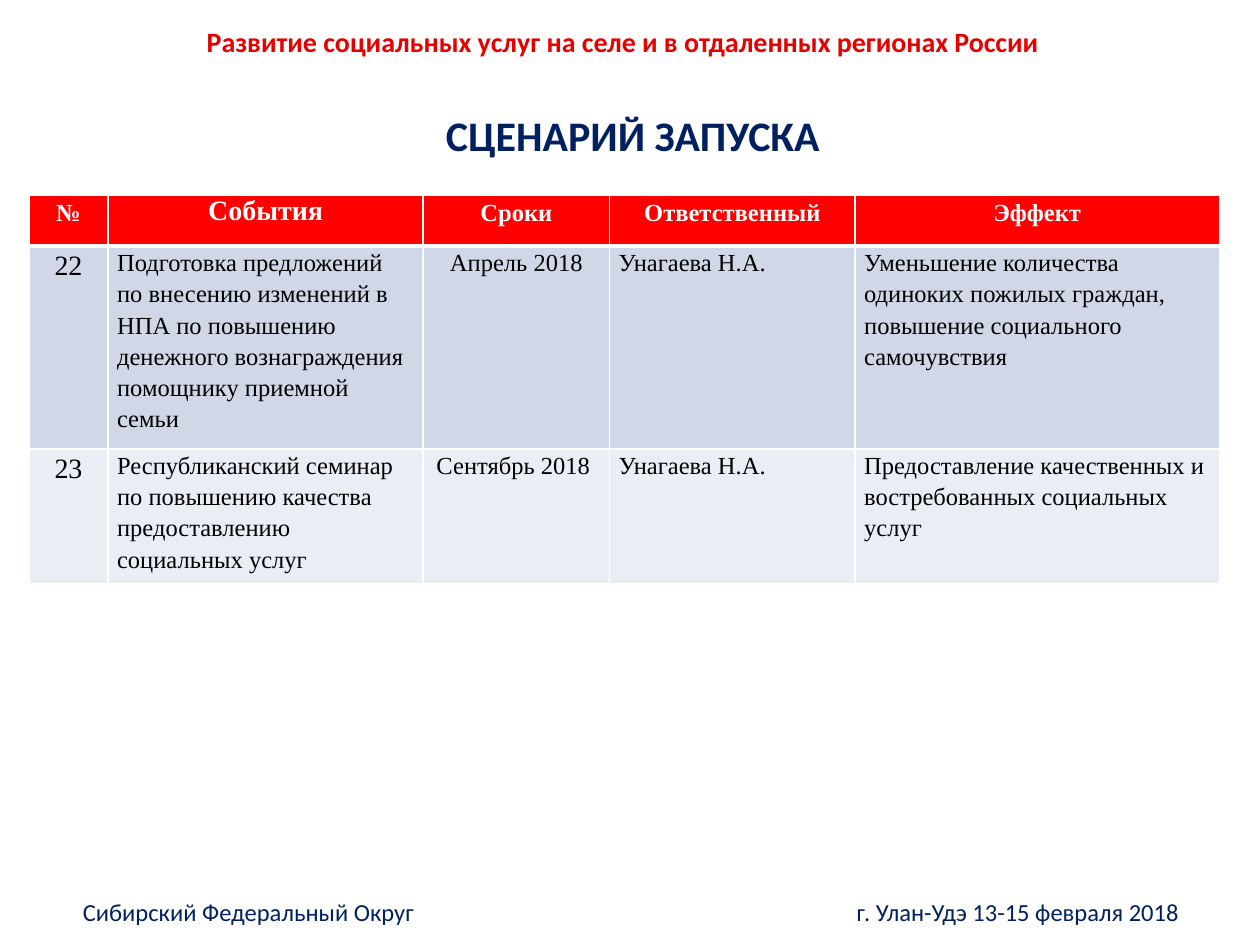
from lxml.etree import SubElement
from pptx import Presentation
from pptx.dml.color import RGBColor
from pptx.enum.text import MSO_ANCHOR, PP_ALIGN
from pptx.oxml.ns import qn
from pptx.util import Cm, Pt

COLORS = {
    "navy": "002060",
    "title_red": "E60000",
    "header_red": "FF0000",
    "white": "FFFFFF",
    "black": "000000",
    "band_dark": "D0D8E8",
    "band_light": "E9EDF4",
}
HEADERS = ["№", "События", "Сроки", "Ответственный", "Эффект"]
EVENTS = [
    ["22",
     "Подготовка предложений по внесению изменений в НПА по повышению "
     "денежного вознаграждения помощнику приемной семьи",
     "Апрель 2018", "Унагаева Н.А.",
     "Уменьшение количества одиноких пожилых граждан, повышение "
     "социального самочувствия"],
    ["23",
     "Республиканский семинар по повышению качества предоставлению "
     "социальных услуг",
     "Сентябрь 2018 ", "Унагаева Н.А.",
     "Предоставление качественных и востребованных социальных услуг"],
]
COLUMN_WIDTHS = [1.6, 6.35, 3.76, 4.95, 7.34]
ROW_HEIGHTS = [1.02, 4.09, 2.72]
CENTERED_COLUMNS = (0, 2)


def color(name):
    return RGBColor.from_string(COLORS[name])


def add_span(para, text, size, color_name, font="Calibri", bold=False):
    span = para.add_run()
    span.text = text
    span.font.name = font
    span.font.size = Pt(size)
    span.font.bold = bold
    span.font.color.rgb = color(color_name)


def add_text(page, bounds, text, size, color_name, bold=False,
             align=PP_ALIGN.LEFT, anchor=MSO_ANCHOR.MIDDLE):
    box = page.shapes.add_textbox(*(Cm(value) for value in bounds))
    box.text_frame.word_wrap = True
    box.text_frame.vertical_anchor = anchor
    para = box.text_frame.paragraphs[0]
    para.alignment = align
    add_span(para, text, size, color_name, bold=bold)
    return para


def add_right_tab(para, position):
    properties = para._p.get_or_add_pPr()
    tabs = SubElement(properties, qn("a:tabLst"))
    SubElement(tabs, qn("a:tab"), pos=str(Cm(position)), algn="r")


def set_borders(cell, bottom_width):
    properties = cell._tc.get_or_add_tcPr()
    widths = {"lnL": 1, "lnR": 1, "lnT": 1, "lnB": bottom_width}
    for side, width in widths.items():
        line = SubElement(properties, qn(f"a:{side}"), w=str(Pt(width)))
        fill = SubElement(line, qn("a:solidFill"))
        SubElement(fill, qn("a:srgbClr"), val=COLORS["white"])


def fill_cell(cell, text, size, fill, is_header, centered, spacing):
    set_borders(cell, 3 if is_header else 1)
    cell.fill.solid()
    cell.fill.fore_color.rgb = color(fill)
    cell.margin_left = cell.margin_right = Cm(0.08 if is_header else 0.18)
    cell.margin_top = cell.margin_bottom = 0
    para = cell.text_frame.paragraphs[0]
    para.alignment = PP_ALIGN.CENTER if centered else PP_ALIGN.LEFT
    para.line_spacing = spacing
    add_span(para, text, size, "white" if is_header else "black",
             "Times New Roman", is_header)


def add_schedule(page):
    rows = [HEADERS] + EVENTS
    fills = ["header_red", "band_dark", "band_light"]
    table = page.shapes.add_table(
        len(rows), len(HEADERS), Cm(0.58), Cm(3.94),
        Cm(sum(COLUMN_WIDTHS)), Cm(sum(ROW_HEIGHTS))).table
    for column, width in zip(table.columns, COLUMN_WIDTHS):
        column.width = Cm(width)
    for row, height in zip(table.rows, ROW_HEIGHTS):
        row.height = Cm(height)
    for row_index, texts in enumerate(rows):
        is_header = row_index == 0
        large_column = 1 if is_header else 0
        for column_index, text in enumerate(texts):
            is_large = column_index == large_column
            fill_cell(table.cell(row_index, column_index), text,
                      16 if is_large else 14, fills[row_index], is_header,
                      is_header or column_index in CENTERED_COLUMNS,
                      1.0 if is_header and is_large else 1.15)


def main():
    deck = Presentation()
    deck.slide_width, deck.slide_height = Cm(25.4), Cm(19.05)
    page = deck.slides.add_slide(deck.slide_layouts[6])
    add_text(page, (8.74, 2.08, 12.7, 1.27), "СЦЕНАРИЙ ЗАПУСКА", 24, "navy",
             bold=True, anchor=MSO_ANCHOR.TOP)
    footer = add_text(
        page, (1.42, 17.63, 22.63, 1.5),
        "Сибирский Федеральный Округ\tг. Улан-Удэ 13-15 февраля 2018",
        14, "navy")
    add_right_tab(footer, 22.1)
    add_text(page, (1.8, 0.33, 21.64, 0.99),
             "Развитие социальных услуг на селе и в отдаленных регионах России ",
             16, "title_red", bold=True, align=PP_ALIGN.CENTER)
    add_schedule(page)
    deck.save("out.pptx")


if __name__ == "__main__":
    main()
